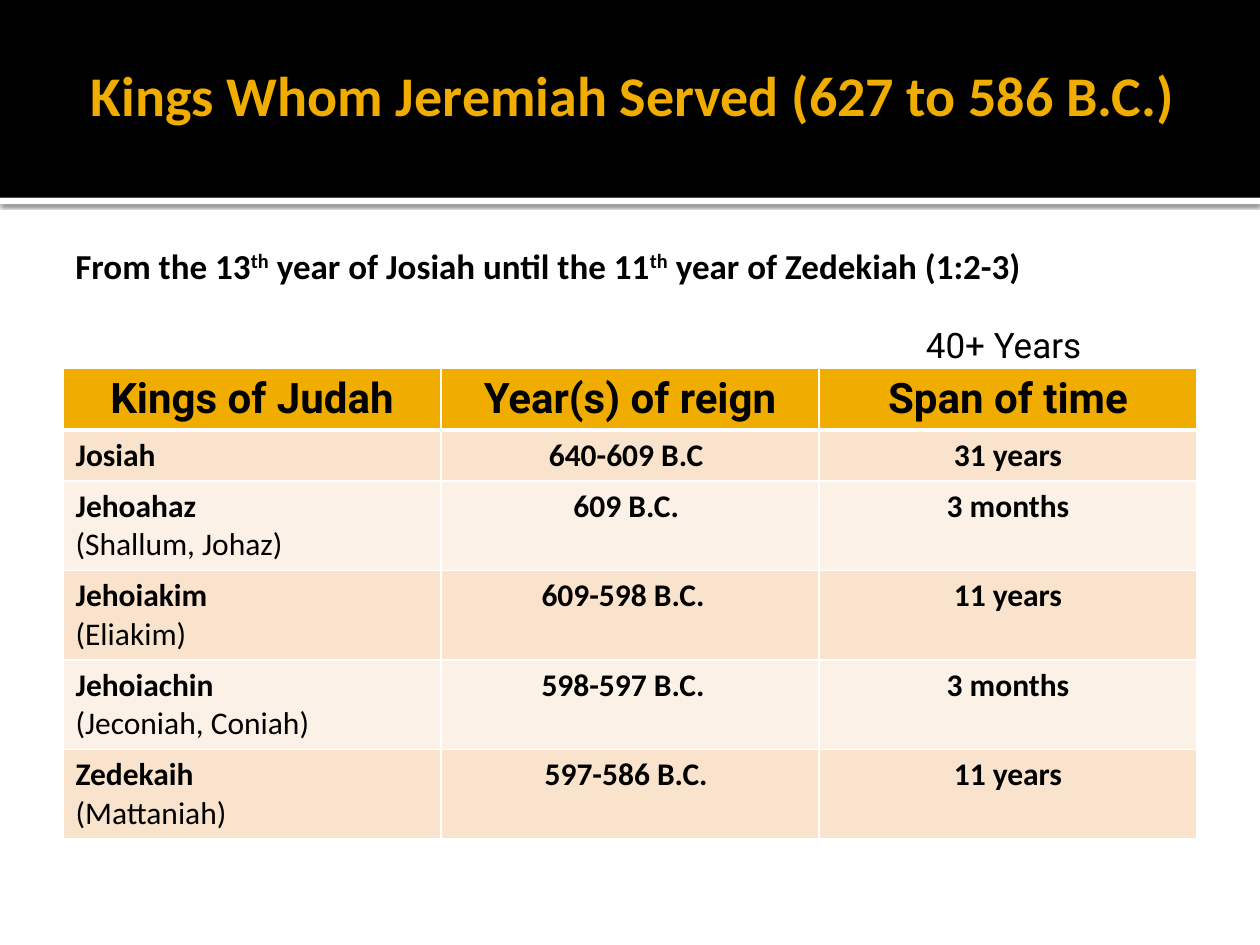
import dataclasses

import lxml.etree
import pptx
import pptx.dml.color
import pptx.enum.shapes
import pptx.enum.text
import pptx.oxml
import pptx.oxml.ns
import pptx.util

Inches = pptx.util.Inches
CENTER = pptx.enum.text.PP_ALIGN.CENTER
LEFT = pptx.enum.text.PP_ALIGN.LEFT
COLORS = {
    "black": "000000",
    "white": "FFFFFF",
    "gold": "F0AD00",
    "peach": "F9E3CC",
    "cream": "FCF1E7",
}
TITLE_FONT = {"name": "Calibri", "size": pptx.util.Pt(32), "bold": True}
HEADING_FONT = {"name": "Roboto", "size": pptx.util.Pt(24), "bold": True}
KING_FONT = {"name": "Calibri", "size": pptx.util.Pt(18), "bold": True}
ALIAS_FONT = KING_FONT | {"bold": False}
SPAN_FONT = {"name": "Roboto", "size": pptx.util.Pt(20), "bold": False}
VERSE_FONT = {"name": "Calibri", "size": pptx.util.Pt(20), "bold": True}
CELL_MARGIN = 0.1


@dataclasses.dataclass
class King:
    name: str
    alias: str
    reign: str
    span: str
    reign_inset: float = 0.06


HEADINGS = ["Kings of Judah", "Year(s) of reign", "Span of time"]
KINGS = [
    King("Josiah", "", "640-609 B.C", "31 years"),
    King("Jehoahaz", "(Shallum, Johaz)", "609 B.C.", "3 months"),
    King("Jehoiakim", "(Eliakim)", "609-598 B.C.", "11 years", 0.11),
    King("Jehoiachin", "(Jeconiah, Coniah)", "598-597 B.C.", "3 months", 0.11),
    King("Zedekaih", "(Mattaniah)", "597-586 B.C.", "11 years"),
]
VERSE = [
    ("From the 13", False),
    ("th", True),
    (" year of Josiah until the 11", False),
    ("th", True),
    (" year of Zedekiah (1:2-3)", False),
]


def rgb(color: str) -> pptx.dml.color.RGBColor:
    return pptx.dml.color.RGBColor.from_string(COLORS[color])


def add_run(paragraph, text: str, font: dict, color: str = "black",
            raised: bool = False) -> None:
    run = paragraph.add_run()
    run.text = text
    for attribute, value in font.items():
        setattr(run.font, attribute, value)
    run.font.color.rgb = rgb(color)
    if raised:
        run.font._element.set("baseline", "30000")


def add_band(slide, top: float, height: float, color: str):
    band = slide.shapes.add_shape(
        pptx.enum.shapes.MSO_SHAPE.RECTANGLE,
        0, Inches(top), Inches(10), Inches(height))
    band.shadow.inherit = False
    band.fill.solid()
    band.fill.fore_color.rgb = rgb(color)
    band.line.fill.background()
    return band


def add_drop_shadow(band) -> None:
    effects = band._element.spPr.find(pptx.oxml.ns.qn("a:effectLst"))
    effects.append(pptx.oxml.parse_xml(
        f'<a:outerShdw {pptx.oxml.ns.nsdecls("a")} blurRad="31750" '
        'dist="10160" dir="5400000" algn="tl" rotWithShape="0">'
        f'<a:srgbClr val="{COLORS["black"]}"><a:alpha val="60000"/>'
        '</a:srgbClr></a:outerShdw>'))


def add_label(slide, left: float, top: float, width: float):
    label = slide.shapes.add_textbox(
        Inches(left), Inches(top), Inches(width), Inches(0.44))
    label.text_frame.word_wrap = False
    label.text_frame.auto_size = pptx.enum.text.MSO_AUTO_SIZE.SHAPE_TO_FIT_TEXT
    return label.text_frame.paragraphs[0]


def set_borders(cell, top: float, bottom: float) -> None:
    qn = pptx.oxml.ns.qn
    properties = cell._tc.get_or_add_tcPr()
    for side, points in {"L": 1, "R": 1, "T": top, "B": bottom}.items():
        border = lxml.etree.SubElement(
            properties, qn(f"a:ln{side}"), w=str(pptx.util.Pt(points)))
        fill = lxml.etree.SubElement(border, qn("a:solidFill"))
        lxml.etree.SubElement(fill, qn("a:srgbClr"), val=COLORS["white"])


def fill_cell(cell, lines: list, color: str, alignment,
              top: float = 1, bottom: float = 1) -> None:
    set_borders(cell, top, bottom)
    cell.fill.solid()
    cell.fill.fore_color.rgb = rgb(color)
    for index, (text, font) in enumerate(lines):
        frame = cell.text_frame
        paragraph = frame.add_paragraph() if index else frame.paragraphs[0]
        paragraph.alignment = alignment
        add_run(paragraph, text, font)


def add_kings_table(slide) -> None:
    heights = [0.49] + [0.71 if king.alias else 0.4 for king in KINGS]
    table = slide.shapes.add_table(
        len(heights), len(HEADINGS), Inches(0.5), Inches(2.92),
        Inches(9), Inches(sum(heights))).table
    table.horz_banding = False
    for row, height in zip(table.rows, heights):
        row.height = Inches(height)
    for column, heading in enumerate(HEADINGS):
        fill_cell(table.cell(0, column), [(heading, HEADING_FONT)],
                  "gold", CENTER, bottom=3)
    for row, king in enumerate(KINGS, start=1):
        color = "peach" if row % 2 else "cream"
        top = 3 if row == 1 else 1
        names = [(king.name, KING_FONT)]
        if king.alias:
            names.append((king.alias, ALIAS_FONT))
        fill_cell(table.cell(row, 0), names, color, LEFT, top)
        for column, text in enumerate([king.reign, king.span], start=1):
            fill_cell(table.cell(row, column), [(text, KING_FONT)],
                      color, CENTER, top)
        table.cell(row, 1).margin_right = Inches(CELL_MARGIN + king.reign_inset)


def place_title(slide) -> None:
    title = slide.shapes.title
    slide.shapes.element.append(title.element)
    title.left, title.top = Inches(0.21), Inches(0.06)
    title.width, title.height = Inches(9.58), Inches(1.37)
    frame_format = {
        "auto_size": pptx.enum.text.MSO_AUTO_SIZE.NONE,
        "vertical_anchor": pptx.enum.text.MSO_ANCHOR.MIDDLE,
        "margin_left": Inches(0.1),
        "margin_right": Inches(0.05),
        "margin_top": Inches(0.05),
        "margin_bottom": Inches(0.05),
    }
    for attribute, value in frame_format.items():
        setattr(title.text_frame, attribute, value)
    heading = title.text_frame.paragraphs[0]
    heading.alignment = CENTER
    add_run(heading, "Kings Whom Jeremiah Served (627 to 586 B.C.)",
            TITLE_FONT, "gold")


def main() -> None:
    deck = pptx.Presentation()
    deck.slide_width, deck.slide_height = Inches(10), Inches(7.5)
    slide = deck.slides.add_slide(deck.slide_layouts.get_by_name("Title Only"))
    add_drop_shadow(add_band(slide, 1.57, 0.05, "white"))
    add_band(slide, 0, 1.57, "black")
    place_title(slide)
    add_kings_table(slide)
    add_run(add_label(slide, 7.25, 2.52, 1.44), "40+ Years", SPAN_FONT)
    verse = add_label(slide, 0.5, 1.89, 8)
    for text, raised in VERSE:
        add_run(verse, text, VERSE_FONT, raised=raised)
    deck.save("out.pptx")


if __name__ == "__main__":
    main()
